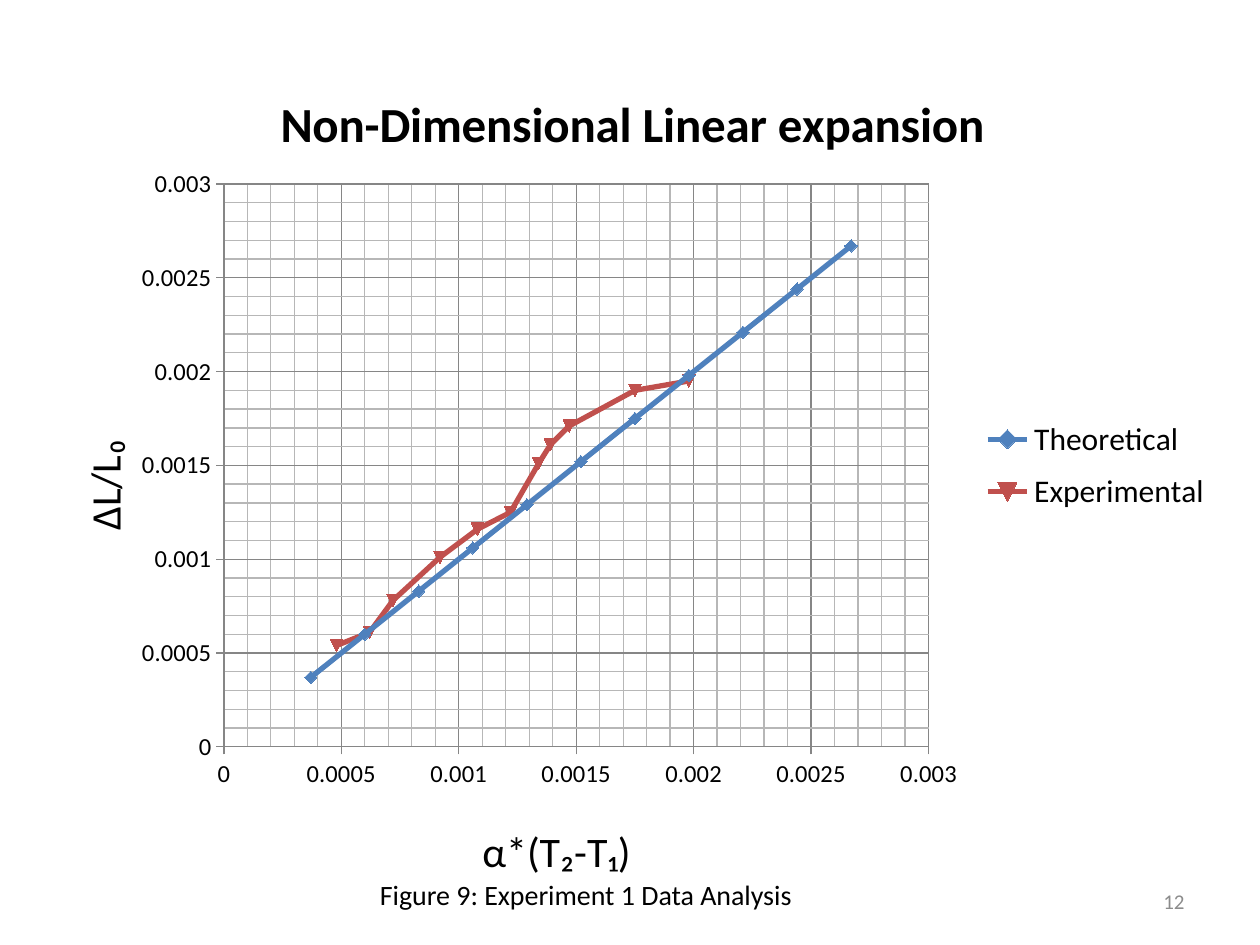
from lxml import etree
from pptx import Presentation
from pptx.chart.data import XyChartData
from pptx.dml.color import RGBColor
from pptx.enum.chart import XL_CHART_TYPE, XL_LEGEND_POSITION, XL_TICK_MARK
from pptx.enum.text import MSO_ANCHOR, PP_ALIGN
from pptx.oxml.ns import qn
from pptx.util import Pt

FONT = "Calibri"
BLACK, GRAY, GRID, FINE = "000000", "8C8C8C", "868686", "B7B7B7"
THEORY = [0.00037, 0.0006, 0.00083, 0.00106, 0.00129, 0.00152,
          0.00175, 0.00198, 0.00221, 0.00244, 0.00267]
TEST_X = [0.00048, 0.00062, 0.00072, 0.00092, 0.00108, 0.00122,
          0.00134, 0.00139, 0.00147, 0.00175, 0.00198]
TEST_Y = [0.00054, 0.00061, 0.00078, 0.00101, 0.00116, 0.00125,
          0.00151, 0.00161, 0.00171, 0.0019, 0.00195]
SERIES = [("Theoretical", THEORY, THEORY, "4F81BD"),
          ("Experimental", TEST_X, TEST_Y, "C0504D")]


def color(value):
    return RGBColor.from_string(value)


def assign(item, values):
    for key, value in values.items():
        setattr(item, key, value)


def style(font, size, tint=BLACK, bold=False):
    assign(font, {"name": FONT, "size": Pt(size), "bold": bold})
    font.color.rgb = color(tint)


def stroke(line, tint, width):
    line.color.rgb = color(tint)
    line.width = Pt(width)


def arrange(node, **marks):
    """Give a chart part a manual layout, in fractions of the chart."""
    layout = node.find(qn("c:layout"))
    if layout is None:
        layout = etree.Element(qn("c:layout"))
        ahead = [node.find(qn(tag)) for tag in ("c:tx", "c:legendPos")]
        ahead = [part for part in ahead if part is not None]
        if ahead:
            ahead[0].addnext(layout)
        else:
            node.insert(0, layout)
    for child in list(layout):
        layout.remove(child)
    manual = etree.SubElement(layout, qn("c:manualLayout"))
    if node.tag == qn("c:plotArea"):
        etree.SubElement(manual, qn("c:layoutTarget")).set("val", "inner")
    for key in ("x", "y"):
        etree.SubElement(manual, qn(f"c:{key}Mode")).set("val", "edge")
    for key, value in marks.items():
        etree.SubElement(manual, qn(f"c:{key}")).set("val", str(value))


def caption(title, text, size, x, y, bold=False):
    part = title.text_frame.paragraphs[0]
    run = part.add_run()
    run.text = text
    style(part.font, size, bold=bold)
    style(run.font, size, bold=bold)
    arrange(title._element, x=x, y=y)


def scale(axis, text, x, y):
    assign(axis, {"minimum_scale": 0, "maximum_scale": 0.003,
                  "major_unit": 0.0005, "minor_unit": 0.0001,
                  "has_major_gridlines": True, "has_minor_gridlines": True,
                  "major_tick_mark": XL_TICK_MARK.OUTSIDE,
                  "minor_tick_mark": XL_TICK_MARK.NONE,
                  "has_title": True})
    assign(axis.tick_labels, {"number_format": "General",
                              "number_format_is_linked": False})
    style(axis.tick_labels.font, 14)
    stroke(axis.format.line, GRID, 0.75)
    stroke(axis.major_gridlines.format.line, GRID, 0.75)
    minor = axis._element.find(qn("c:minorGridlines"))
    props = etree.SubElement(minor, qn("c:spPr"))
    line = etree.SubElement(props, qn("a:ln"), w=str(Pt(0.75)))
    fill = etree.SubElement(line, qn("a:solidFill"))
    etree.SubElement(fill, qn("a:srgbClr"), val=FINE)
    caption(axis.axis_title, text, 24, x, y)


def plot(slide, box):
    data = XyChartData()
    for name, xs, ys, _ in SERIES:
        series = data.add_series(name)
        for x, y in zip(xs, ys):
            series.add_data_point(x, y)
    chart = slide.shapes.add_chart(
        XL_CHART_TYPE.XY_SCATTER_LINES, *box, data).chart
    style(chart.font, 10)
    chart.plots[0].vary_by_categories = False
    for series, (_, _, _, tint) in zip(chart.plots[0].series, SERIES):
        series.smooth = False
        stroke(series.format.line, tint, 3)
        # The symbol stays automatic, so each series gets its own.
        series.marker.size = 7
        series.marker.format.fill.solid()
        series.marker.format.fill.fore_color.rgb = color(tint)
        stroke(series.marker.format.line, tint, 0.75)
    chart.has_title = True
    caption(chart.chart_title, "Non-Dimensional Linear expansion", 28,
            0.2, 0.05, bold=True)
    scale(chart.category_axis, "α*(T₂-T₁)", 0.37, 0.91)
    scale(chart.value_axis, "ΔL/L₀", 0.03, 0.46)
    chart.has_legend = True
    assign(chart.legend, {"position": XL_LEGEND_POSITION.RIGHT,
                          "include_in_layout": False})
    style(chart.legend.font, 18)
    arrange(chart.legend._element, x=0.79, y=0.43, w=0.2, h=0.14)
    area = chart._chartSpace.chart.plotArea
    arrange(area, x=0.16, y=0.17, w=0.59, h=0.66)


def label(slide, box, text, size, tint=BLACK,
          align=PP_ALIGN.LEFT, anchor=MSO_ANCHOR.TOP):
    frame = slide.shapes.add_textbox(*box).text_frame
    assign(frame, {"word_wrap": True, "vertical_anchor": anchor})
    part = frame.paragraphs[0]
    part.alignment = align
    run = part.add_run()
    run.text = text
    style(run.font, size, tint)


def main():
    deck = Presentation()
    assign(deck, {"slide_width": Pt(720), "slide_height": Pt(540)})
    slide = deck.slides.add_slide(deck.slide_layouts[6])
    plot(slide, (Pt(18.7), Pt(22.3), Pt(682.6), Pt(487.4)))
    label(slide, (Pt(210), Pt(498), Pt(252), Pt(26.6)),
          "Figure 9: Experiment 1 Data Analysis", 16)
    label(slide, (Pt(516), Pt(500.5), Pt(168), Pt(28.8)), "12", 12, GRAY,
          PP_ALIGN.RIGHT, MSO_ANCHOR.MIDDLE)
    deck.save("out.pptx")


if __name__ == "__main__":
    main()
